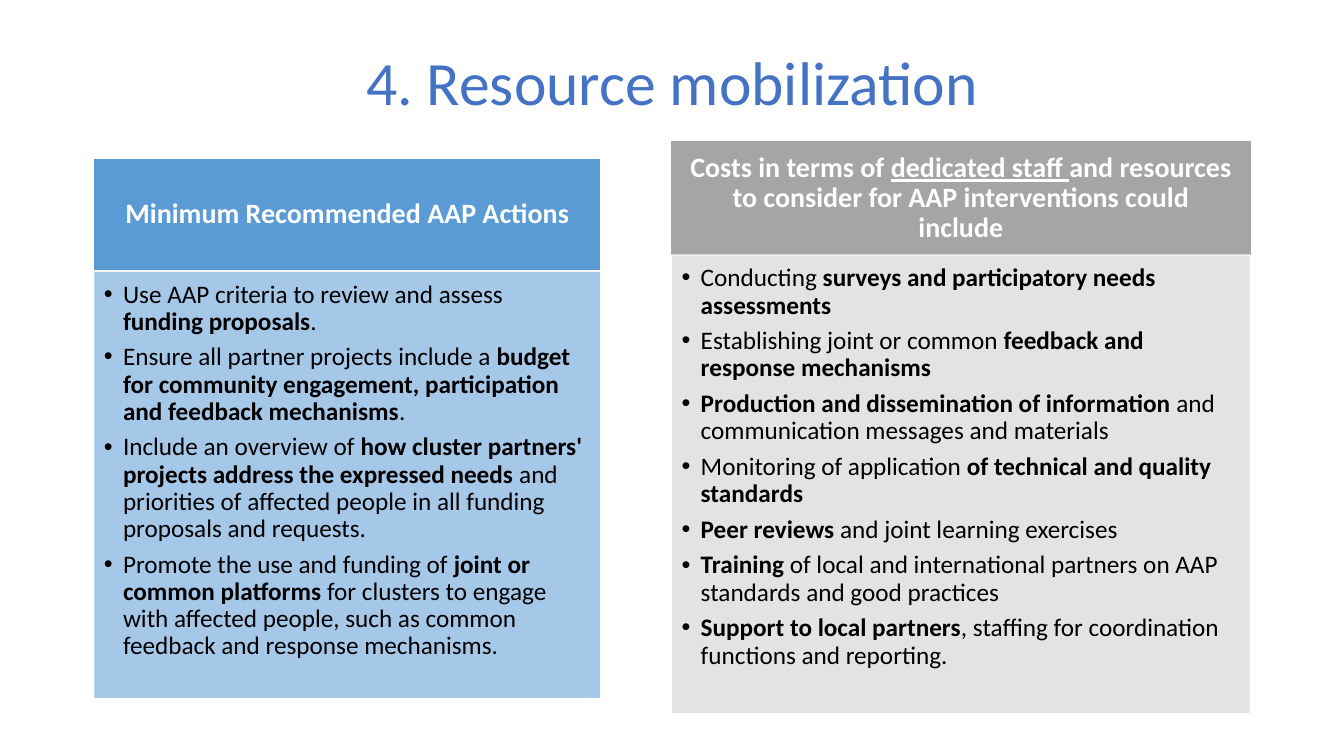
from pptx import Presentation
from pptx.dml.color import RGBColor
from pptx.enum.text import MSO_ANCHOR as Anchor, MSO_AUTO_SIZE as AutoSize, PP_ALIGN as Align
from pptx.oxml.ns import qn
from pptx.util import Inches, Pt
from lxml.etree import SubElement

FONT = "Calibri"
COMPARISON_LAYOUT = 4
HEADING_HEIGHT = 1.12

# Asterisks enclose the emphasised words: underlined in headings, bold in lists.
ACTIONS_HEADING = "Minimum Recommended AAP Actions"
ACTIONS = [
    "Use AAP criteria to review and assess *funding proposals*.",
    "Ensure all partner projects include a *budget for community engagement, "
    "participation and feedback mechanisms*.",
    "Include an overview of *how cluster partners' projects address the expressed needs *"
    "and priorities of affected people in all funding proposals and requests.",
    "Promote the use and funding of* joint or common platforms *for clusters to engage "
    "with affected people, such as common feedback and response mechanisms.",
]
COSTS_HEADING = ("Costs in terms of *dedicated staff *and resources to consider "
                 "for AAP interventions could include")
COSTS = [
    "Conducting *surveys and participatory needs assessments*",
    "Establishing joint or common* feedback and response mechanisms*",
    "*Production and dissemination of information* and communication messages and materials",
    "Monitoring of application *of technical and quality standards*",
    "*Peer reviews *and joint learning exercises",
    "*Training* of local and international partners on AAP standards and good practices",
    "*Support to local partners*, staffing for coordination functions and reporting.",
]


def rgb(color):
    return RGBColor.from_string(color)


def place(holder, box, insets, anchor):
    holder.left, holder.top, holder.width, holder.height = map(Inches, box)
    frame = holder.text_frame
    frame.word_wrap = True
    frame.auto_size = AutoSize.NONE
    frame.vertical_anchor = anchor
    (frame.margin_left, frame.margin_top,
     frame.margin_right, frame.margin_bottom) = map(Inches, insets)
    return frame


def paint(holder, fill, line, opacity=100):
    holder.fill.solid()
    holder.fill.fore_color.rgb = rgb(fill)
    holder.line.color.rgb = rgb(line)
    holder.line.width = Pt(1)
    if opacity < 100:
        for color in holder.element.spPr.iter(qn("a:srgbClr")):
            SubElement(color, qn("a:alpha"), val=str(opacity * 1000))


def write(paragraph, text, size, color, emphasis="bold"):
    """Fill a paragraph, giving the parts between asterisks the emphasis."""
    paragraph.font.name = FONT
    paragraph.font.size = Pt(size)
    paragraph.font.color.rgb = rgb(color)
    paragraph.line_spacing = 0.9
    paragraph.space_before = Pt(0)
    for index, part in enumerate(text.split("*")):
        if part:
            run = paragraph.add_run()
            run.text = part
            if index % 2:
                setattr(run.font, emphasis, True)


def add_title(holder, text, box):
    frame = place(holder, box, (0.1, 0.05, 0.1, 0.05), Anchor.MIDDLE)
    title = frame.paragraphs[0]
    write(title, text, 44, "4472C4")
    title.alignment = Align.CENTER


def add_heading(holder, text, box, fill, line):
    frame = place(holder, box, (0.16, 0.09, 0.16, 0.09), Anchor.MIDDLE)
    paint(holder, fill, line)
    heading = frame.paragraphs[0]
    write(heading, text, 20, "FFFFFF", "underline")
    heading.font.bold = True
    heading.alignment = Align.CENTER


def add_list(holder, items, box, fill):
    frame = place(holder, box, (0.1, 0.1, 0.14, 0.16), Anchor.TOP)
    paint(holder, fill, "FFFFFF", opacity=90)
    for index, item in enumerate(items):
        bullet = frame.add_paragraph() if index else frame.paragraphs[0]
        write(bullet, item, 18, "000000")
        bullet.space_after = Pt(6)
        properties = bullet._p.get_or_add_pPr()
        properties.set("marL", str(Inches(0.19)))
        properties.set("indent", str(-Inches(0.19)))


def add_column(holders, heading, items, box, heading_fill, heading_line, list_fill):
    left, top, width, height = box
    heading_holder, list_holder = holders
    add_heading(heading_holder, heading, (left, top, width, HEADING_HEIGHT),
                heading_fill, heading_line)
    add_list(list_holder, items,
             (left, top + HEADING_HEIGHT, width, height - HEADING_HEIGHT), list_fill)


def main():
    deck = Presentation()
    deck.slide_width, deck.slide_height = Inches(13.33), Inches(7.5)
    slide = deck.slides.add_slide(deck.slide_layouts[COMPARISON_LAYOUT])
    title, *columns = slide.placeholders
    add_title(title, "4. Resource mobilization", (0.92, 0.12, 11.5, 1.45))
    add_column(columns[:2], ACTIONS_HEADING, ACTIONS, (0.93, 1.57, 5.03, 5.36),
               "5B9BD5", "FFFFFF", "9DC3E6")
    add_column(columns[2:4], COSTS_HEADING, COSTS, (6.66, 1.41, 5.74, 5.67),
               "A5A5A5", "A5A5A5", "E1E1E1")
    deck.save("out.pptx")


if __name__ == "__main__":
    main()
